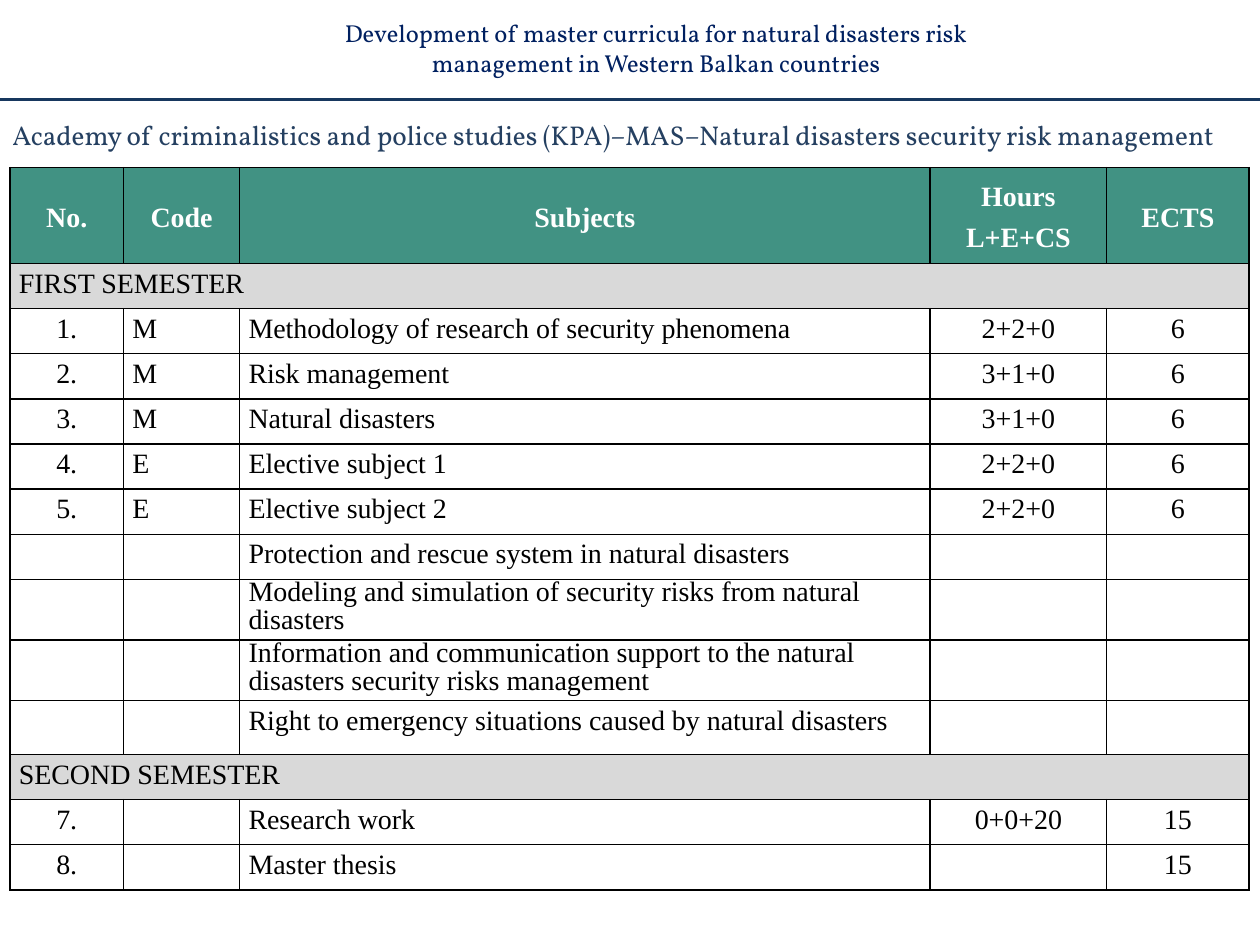
from lxml import etree
from pptx import Presentation
from pptx.dml.color import RGBColor
from pptx.enum import shapes, text
from pptx.oxml import ns
from pptx.util import Cm, Pt

COLORS = {
    "title": "002060", "rule": "17375E", "subtitle": "254061", "header": "419283",
    "semester": "D9D9D9", "body": "FFFFFF", "ink": "000000", "white": "FFFFFF",
}
CENTER, LEFT = text.PP_ALIGN.CENTER, text.PP_ALIGN.LEFT
MIDDLE, TOP = text.MSO_ANCHOR.MIDDLE, text.MSO_ANCHOR.TOP


def style_span(span, font_name, size, color, bold=False):
    span.font.name = font_name
    span.font.size = Pt(size)
    span.font.bold = bold
    span.font.color.rgb = RGBColor.from_string(COLORS[color])


def add_borders(cell):
    properties = cell._tc.get_or_add_tcPr()
    for index, side in enumerate(("lnL", "lnR", "lnT", "lnB")):
        line = etree.Element(ns.qn("a:" + side), w=str(Pt(1)))
        fill = etree.SubElement(line, ns.qn("a:solidFill"))
        etree.SubElement(fill, ns.qn("a:srgbClr"), val=COLORS["ink"])
        properties.insert(index, line)


deck = Presentation()
deck.slide_width, deck.slide_height = Cm(25.4), Cm(19.05)
page = deck.slides.add_slide(deck.slide_layouts[6])

headings = [
    ("Development of master curricula for natural disasters risk management in Western Balkan countries",
     (5.51, 0.43, 15.44, 1.07), 14, "title", CENTER, MIDDLE),
    ("Academy of criminalistics and police studies (KPA)–MAS–Natural disasters security risk management",
     (0, 2.26, 25.4, 1.12), 15.5, "subtitle", LEFT, TOP),
]
for wording, place, size, color, align, anchor in headings:
    box = page.shapes.add_textbox(*[Cm(length) for length in place])
    frame = box.text_frame
    frame.word_wrap = True
    frame.vertical_anchor = anchor
    frame.text = wording
    para = frame.paragraphs[0]
    para.alignment = align
    style_span(para.runs[0], "Vollkorn", size, color)

rule = page.shapes.add_connector(shapes.MSO_CONNECTOR.STRAIGHT, 0, Cm(2.01), deck.slide_width, Cm(2.01))
rule.line.color.rgb = RGBColor.from_string(COLORS["rule"])
rule.line.width = Pt(2)
etree.SubElement(rule._element.spPr, ns.qn("a:effectLst"))

rows = [
    ("No.", "Code", "Subjects", "Hours\nL+E+CS", "ECTS"),
    ("FIRST SEMESTER", "", "", "", ""),
    ("1.", "M", "Methodology of research of security phenomena", "2+2+0", "6"),
    ("2.", "M", "Risk management", "3+1+0", "6"),
    ("3.", "M", "Natural disasters", "3+1+0", "6"),
    ("4.", "E", "Elective subject 1", "2+2+0", "6"),
    ("5.", "E", "Elective subject 2", "2+2+0", "6"),
    ("", "", "Protection and rescue system in natural disasters", "", ""),
    ("", "", "Modeling and simulation of security risks from natural disasters", "", ""),
    ("", "", "Information and communication support to the natural disasters security risks management", "", ""),
    ("", "", "Right to emergency situations caused by natural disasters", "", ""),
    ("SECOND SEMESTER", "", "", "", ""),
    ("7.", "", "Research work", "0+0+20", "15"),
    ("8.", "", "Master thesis", "", "15"),
]
column_widths = [2.29, 2.34, 13.92, 3.56, 2.87]
special_heights = {0: 1.93, 8: 1.12, 9: 1.19, 10: 1.09}
row_heights = [special_heights.get(index, 0.91) for index in range(len(rows))]
tight_rows = (8, 9)

table = page.shapes.add_table(
    len(rows), len(column_widths), Cm(0.2), Cm(3.38), Cm(sum(column_widths)), Cm(sum(row_heights))
).table
for column, width in zip(table.columns, column_widths):
    column.width = Cm(width)

for row_index, values in enumerate(rows):
    table.rows[row_index].height = Cm(row_heights[row_index])
    is_header = row_index == 0
    is_semester = values[0].endswith("SEMESTER")
    fill = "header" if is_header else "semester" if is_semester else "body"
    for column_index, value in enumerate(values):
        cell = table.cell(row_index, column_index)
        cell.margin_left = cell.margin_right = Cm(0.18)
        cell.margin_top = cell.margin_bottom = 0
        cell.vertical_anchor = MIDDLE if is_header else TOP
        cell.fill.solid()
        cell.fill.fore_color.rgb = RGBColor.from_string(COLORS[fill])
        add_borders(cell)
        if not value:
            continue
        cell.text_frame.text = value
        centered = is_header or (column_index not in (1, 2) and not is_semester)
        for para in cell.text_frame.paragraphs:
            para.alignment = CENTER if centered else LEFT
            para.line_spacing = 0.9 if row_index in tight_rows else 1.15
            if is_header or is_semester or column_index == 3:
                para.space_after = Pt(3)
            style_span(para.runs[0], "Times New Roman", 16, "white" if is_header else "ink", is_header)
    if is_semester:
        table.cell(row_index, 0).merge(table.cell(row_index, len(values) - 1))

deck.save("out.pptx")
